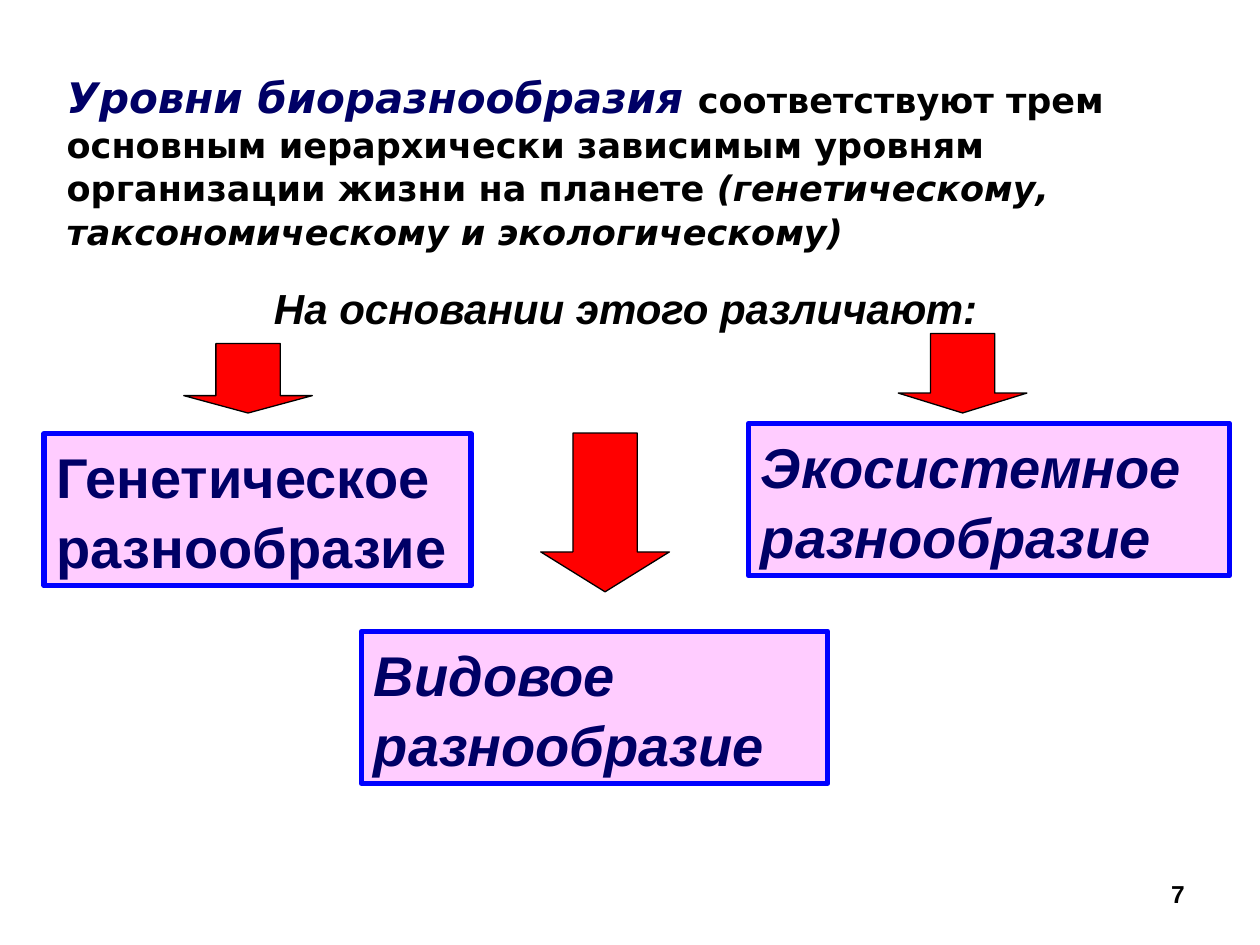
from pptx import Presentation
from pptx import util as u
from pptx.dml.color import RGBColor
from pptx.enum import shapes, text

COLORS = {
    "ink": "000000",
    "navy": "000066",
    "pink": "FFCCFF",
    "blue": "0000FF",
    "red": "FF0000",
}
LEVEL_HEIGHT = 87
ARROW_WIDTH = 73.5


def color(name):
    return RGBColor.from_string(COLORS[name])


def points(*lengths):
    return [u.Pt(length) for length in lengths]


def style(font, size, name="Arial", fill="ink", bold=True, italic=False):
    font.name = name
    font.size = u.Pt(size)
    font.bold = bold
    font.italic = italic
    font.color.rgb = color(fill)


def set_frame(box, align=text.PP_ALIGN.LEFT, spacing=1.04):
    frame = box.text_frame
    frame.word_wrap = True
    frame.vertical_anchor = text.MSO_ANCHOR.MIDDLE
    para = frame.paragraphs[0]
    para.alignment = align
    para.line_spacing = spacing
    return para


def add_label(page, place, words, align, size, italic=False):
    box = page.shapes.add_textbox(*points(*place))
    para = set_frame(box, align)
    para.text = words
    style(para.font, size, italic=italic)


def add_statement(page, place, spans):
    box = page.shapes.add_textbox(*points(*place))
    para = set_frame(box, spacing=1.03)
    for words, size, fill, italic in spans:
        span = para.add_run()
        span.text = words
        style(span.font, size, "DejaVu Sans", fill, italic=italic)


def add_filled(page, kind, place, fill, line, width):
    shape = page.shapes.add_shape(kind, *points(*place))
    shape.shadow.inherit = False
    shape.fill.solid()
    shape.fill.fore_color.rgb = color(fill)
    shape.line.color.rgb = color(line)
    shape.line.width = u.Pt(width)
    return shape


def add_level(page, left, top, width, words, italic):
    place = (left, top, width, LEVEL_HEIGHT)
    box = add_filled(page, shapes.MSO_SHAPE.RECTANGLE, place, "pink", "blue", 3)
    para = set_frame(box)
    para.text = words
    style(para.font, 32, fill="navy", italic=italic)


def add_arrow(page, left, top, height, head):
    place = (left, top, ARROW_WIDTH, height)
    arrow = add_filled(page, shapes.MSO_SHAPE.DOWN_ARROW, place, "red", "ink", 0.75)
    arrow.adjustments[0] = 0.5
    arrow.adjustments[1] = head


def main():
    deck = Presentation()
    deck.slide_width, deck.slide_height = points(720, 540)
    page = deck.slides.add_slide(deck.slide_layouts[6])

    add_label(page, (516, 491.5, 168, 37.5), "7", text.PP_ALIGN.RIGHT, 14)
    add_label(page, (14.5, 157, 686, 36), "На основании этого различают:",
              text.PP_ALIGN.CENTER, 24, italic=True)

    for left, top, width, words, italic in (
        (25.2, 247.7, 244, "Генетическое разнообразие", False),
        (206.6, 360.7, 266.4, "Видовое разнообразие", True),
        (427.7, 241.9, 275, "Экосистемное разнообразие", True),
    ):
        add_level(page, left, top, width, words, italic)

    for left, top, height, head in (
        (105, 196.3, 39.7, 0.25),
        (309, 247.5, 90.7, 0.31),
        (513.3, 190.6, 45.4, 0.25),
    ):
        add_arrow(page, left, top, height, head)

    add_statement(page, (31, 37.4, 669, 109.4), (
        ("Уровни биоразнообразия ", 24, "navy", True),
        ("соответствуют трем основным иерархически зависимым уровням "
         "организации жизни на планете", 20, "ink", False),
        (" (генетическому, таксономическому и экологическому)", 20, "ink", True),
    ))

    deck.save("out.pptx")


if __name__ == "__main__":
    main()
